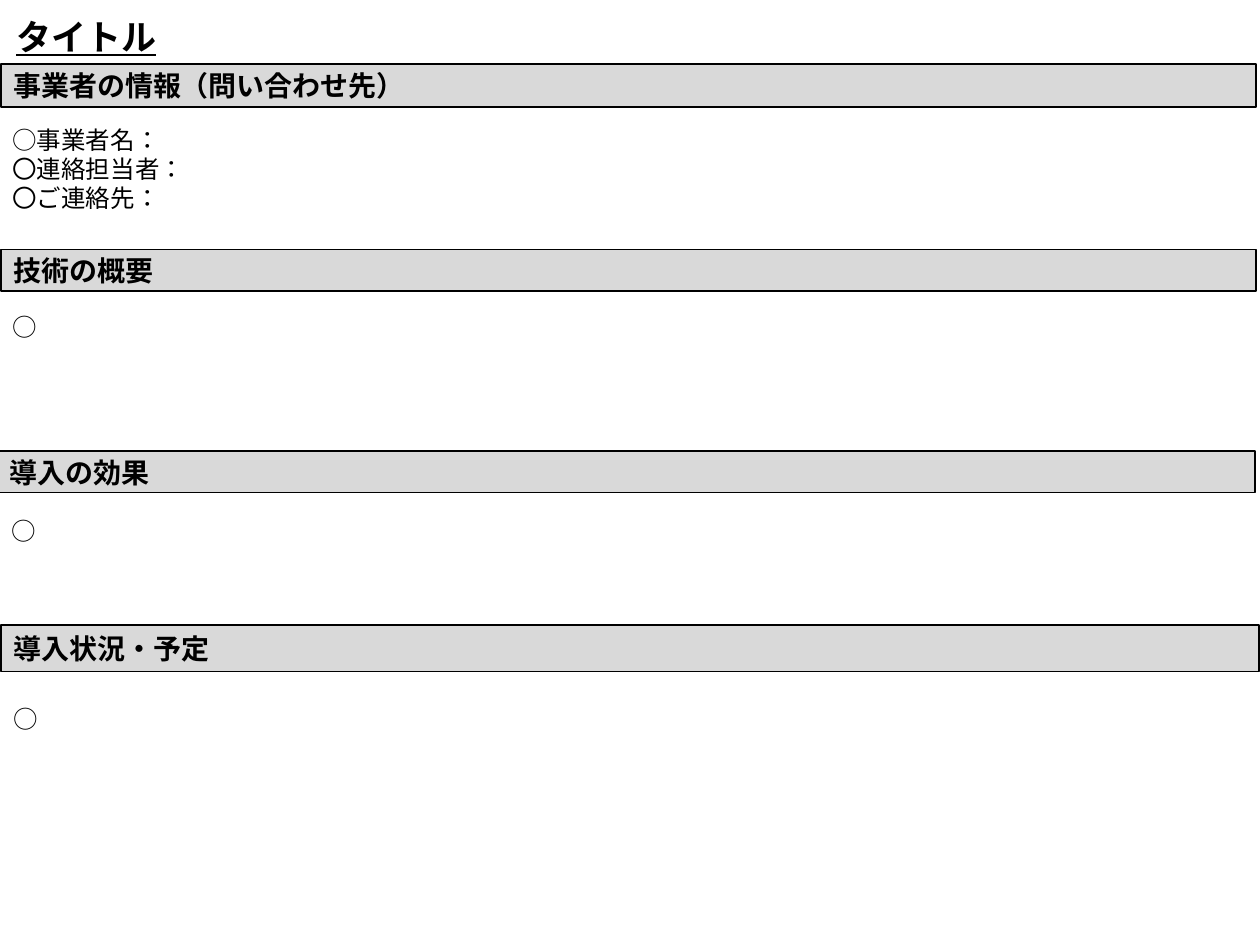
from pptx import Presentation
from pptx.dml.color import RGBColor
from pptx.enum.lang import MSO_LANGUAGE_ID as Lang
from pptx.enum.shapes import MSO_SHAPE as Shape
from pptx.enum.text import MSO_ANCHOR as Anchor, PP_ALIGN as Align
from pptx.oxml.ns import qn
from pptx.util import Inches, Pt
from lxml.etree import SubElement

FONT = "Noto Sans CJK JP"
BLACK, GREY = "000000", "D9D9D9"
TITLE_SIZE, HEADING_SIZE, BODY_SIZE = 20, 16, 14

# Content: heading, its bar (left, top, width, height),
# body lines, and their box, all in inches
TITLE = ("タイトル", (0.03, 0.07, 9.95, 0.44))
SECTIONS = [
    ("事業者の情報（問い合わせ先）", (0.01, 0.51, 9.96, 0.34),
     ["○事業者名：", "〇連絡担当者：", "〇ご連絡先："], (0, 0.94, 5, 0.81)),
    ("技術の概要", (0.01, 1.98, 9.96, 0.33), ["○"], (0, 2.43, 4.97, 0.34)),
    ("導入の効果", (-0.02, 3.58, 9.98, 0.33), ["○"], (-0.01, 4.05, 5, 0.34)),
    ("導入状況・予定", (0.01, 4.96, 9.98, 0.37), ["○"], (0.01, 5.54, 5, 0.34)),
]


def color(value):
    return RGBColor.from_string(value)


def write(box, lines, size, bold=False, underline=False):
    frame = box.text_frame
    frame.word_wrap = True
    frame.text = "\n".join(lines)
    for para in frame.paragraphs:
        para.alignment = Align.LEFT
        for span in para.runs:
            font = span.font
            font.name, font.size = FONT, Pt(size)
            font.bold, font.underline = bold, underline
            font.color.rgb = color(BLACK)
            font.language_id = Lang.JAPANESE
            # Japanese glyphs take the East Asian typeface
            SubElement(span._r.get_or_add_rPr(), qn("a:ea"), typeface=FONT)


def add_text(page, area, lines, size, **style):
    box = page.shapes.add_textbox(*map(Inches, area))
    write(box, lines, size, **style)


def add_bar(page, area, heading):
    bar = page.shapes.add_shape(Shape.RECTANGLE, *map(Inches, area))
    bar.shadow.inherit = False
    bar.fill.solid()
    bar.fill.fore_color.rgb = color(GREY)
    bar.line.color.rgb = color(BLACK)
    bar.line.width = Pt(1)
    bar.text_frame.vertical_anchor = Anchor.MIDDLE
    write(bar, [heading], HEADING_SIZE, bold=True)


def main():
    deck = Presentation()
    deck.slide_width, deck.slide_height = Inches(10), Inches(7.5)
    page = deck.slides.add_slide(deck.slide_layouts[6])

    # Title
    title, title_area = TITLE
    add_text(page, title_area, [title], TITLE_SIZE, bold=True, underline=True)

    # Sections: grey heading bar with body text below
    for heading, bar_area, lines, text_area in SECTIONS:
        add_bar(page, bar_area, heading)
        add_text(page, text_area, lines, BODY_SIZE)

    deck.save("out.pptx")


if __name__ == "__main__":
    main()
